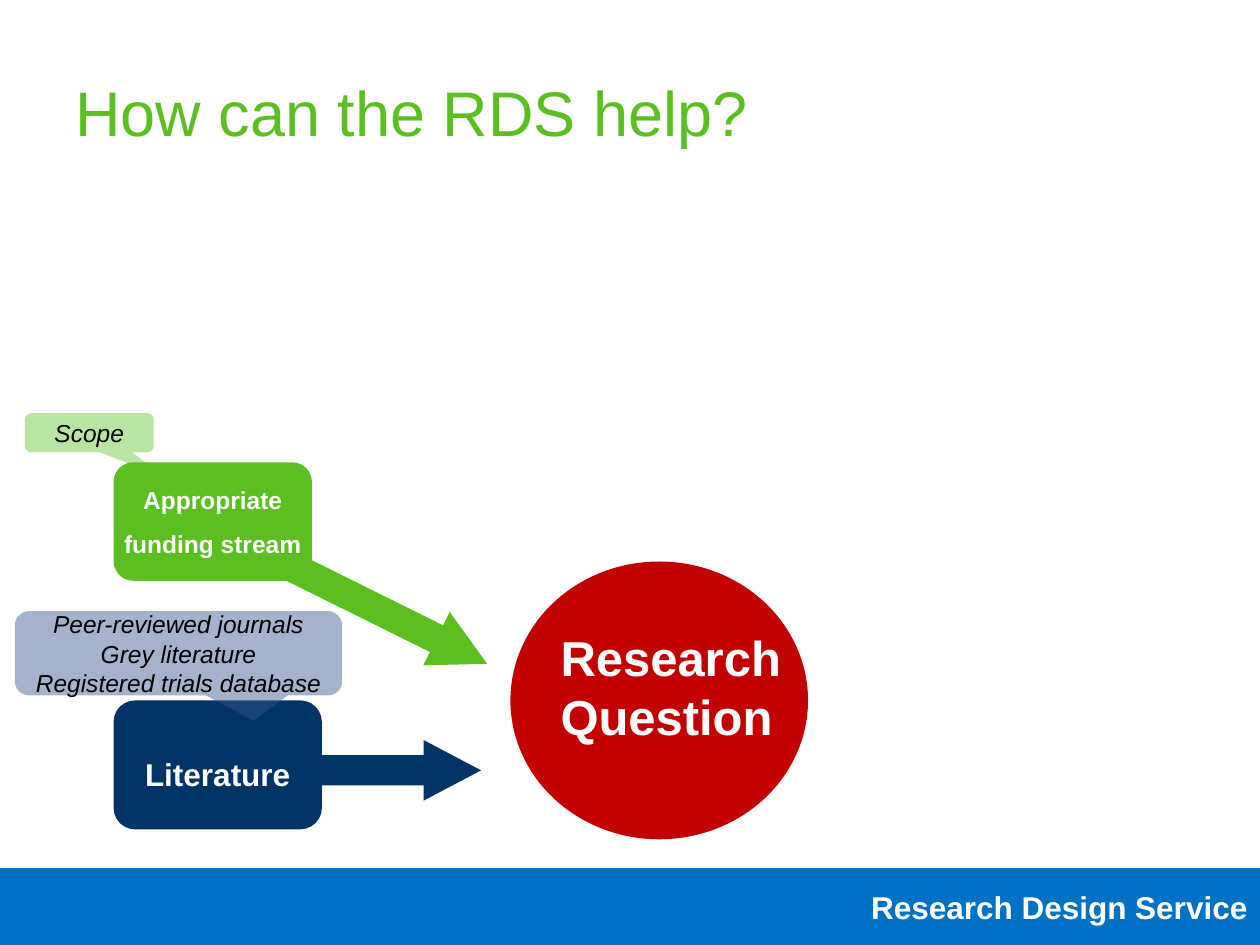
from lxml import etree
from pptx import Presentation
from pptx.dml.color import RGBColor
from pptx.enum import shapes, text
from pptx.oxml.ns import qn
from pptx.util import Cm, Pt

GREEN, NAVY, RED, BLUE = "5BBF21", "003366", "C30000", "0072C6"
SLATE, WHITE, BLACK = "365590", "FFFFFF", "000000"
SHAPE = shapes.MSO_SHAPE
ALIGN = text.PP_ALIGN
ANCHOR = text.MSO_ANCHOR


def color(hex_string):
    return RGBColor.from_string(hex_string)


def set_text(shape, lines, align=ALIGN.CENTER, anchor=ANCHOR.MIDDLE,
             wrap=True, gap=0, top_inset=0.13, **font_format):
    """Write one paragraph per line, all in the same format."""
    frame = shape.text_frame
    frame_format = {"word_wrap": wrap, "vertical_anchor": anchor,
                    "margin_top": Cm(top_inset)}
    for name, value in frame_format.items():
        setattr(frame, name, value)
    font_color = font_format.pop("color", WHITE)
    for index, line in enumerate(lines):
        paragraph = frame.add_paragraph() if index else frame.paragraphs[0]
        paragraph.alignment = align
        paragraph.space_before = Pt(gap if index else 0)
        run = paragraph.add_run()
        run.text = line
        run.font.name = "Arial"
        run.font.color.rgb = color(font_color)
        for name, value in font_format.items():
            setattr(run.font, name, value)


def add_block(slide, kind, box, fill, adjustments=(), rotation=0, alpha=None):
    """Add a filled shape without outline; alpha is opacity in percent."""
    shape = slide.shapes.add_shape(kind, *map(Cm, box))
    shape.shadow.inherit = False
    shape.fill.solid()
    shape.fill.fore_color.rgb = color(fill)
    shape.line.fill.background()
    shape.rotation = rotation
    for index, value in enumerate(adjustments):
        shape.adjustments[index] = value
    if alpha is not None:
        fill_color = shape._element.spPr.find(qn("a:solidFill"))[0]
        etree.SubElement(fill_color, qn("a:alpha")).set("val", str(alpha * 1000))
    return shape


def add_arrow(slide, box, fill, rotation=0):
    add_block(slide, SHAPE.RIGHT_ARROW, box, fill, (0.5, 0.95), rotation)


def add_topic(slide, box, fill, lines, **text_format):
    shape = add_block(slide, SHAPE.ROUNDED_RECTANGLE, box, fill)
    set_text(shape, lines, wrap=False, bold=True, **text_format)


def add_callout(slide, box, fill, pointer, alpha, lines):
    shape = add_block(slide, SHAPE.ROUNDED_RECTANGULAR_CALLOUT, box, fill,
                      (*pointer, 0.17), alpha=alpha)
    set_text(shape, lines, size=Pt(14), italic=True, color=BLACK)


def add_label(slide, box, lines, **text_format):
    shape = slide.shapes.add_textbox(*map(Cm, box))
    set_text(shape, lines, align=ALIGN.LEFT, anchor=ANCHOR.TOP, **text_format)


def main():
    presentation = Presentation()
    presentation.slide_width, presentation.slide_height = Cm(25.4), Cm(19.05)
    slide = presentation.slides.add_slide(presentation.slide_layouts[6])

    # Footer band
    footer = add_block(slide, SHAPE.RECTANGLE, (0, 17.5, 25.4, 1.55), BLUE)
    set_text(footer, ["Research Design Service"], align=ALIGN.RIGHT,
             size=Pt(18), bold=True)

    # Topics and their arrows
    add_arrow(slide, (5.46, 11.76, 4.6, 1.2), GREEN, rotation=26.4)
    add_topic(slide, (2.29, 9.32, 4, 2.39), GREEN,
              ["Appropriate", "funding stream"], size=Pt(14), gap=8)
    add_arrow(slide, (5.1, 14.92, 4.6, 1.22), NAVY)
    add_topic(slide, (2.29, 14.12, 4.2, 2.6), NAVY, ["Literature"],
              size=Pt(18), top_inset=0.5)

    # Research question
    add_block(slide, SHAPE.OVAL, (10.29, 11.32, 6, 5.6), RED)
    add_label(slide, (11.05, 12.52, 5.23, 2.62), ["Research", "Question"],
              size=Pt(28), bold=True)

    # Callouts
    add_callout(slide, (0.3, 12.32, 6.6, 1.7), SLATE, (0.23, 0.8), 45,
                ["Peer-reviewed journals", "Grey literature",
                 "Registered trials database"])
    add_callout(slide, (0.5, 8.33, 2.6, 0.79), GREEN, (0.59, 1.14), 42,
                ["Scope"])

    # Title
    add_label(slide, (1.27, 1.35, 22.86, 3.18), ["How can the RDS help?"],
              size=Pt(36), color=GREEN)

    presentation.save("out.pptx")


if __name__ == "__main__":
    main()
